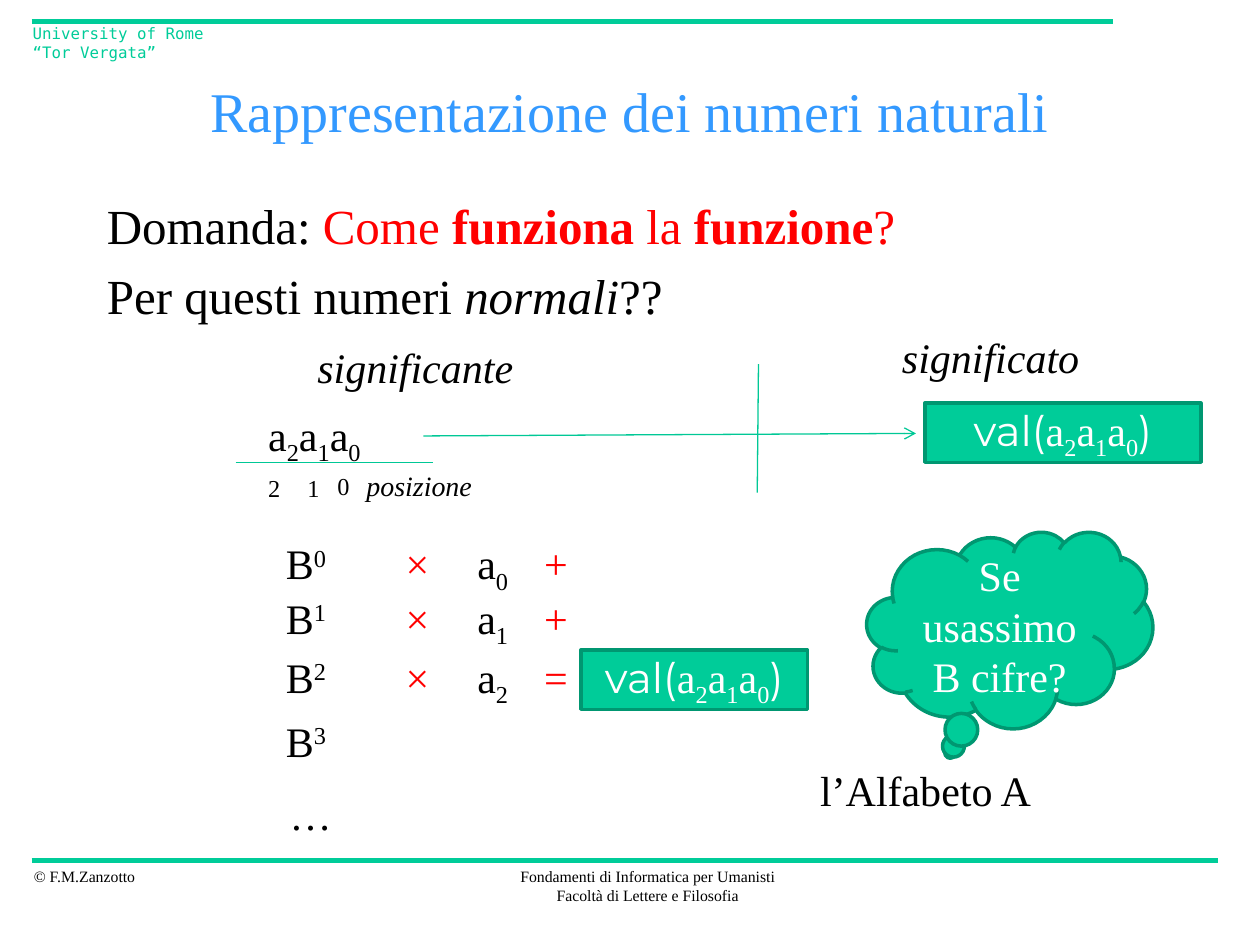
from lxml.etree import SubElement
from pptx import Presentation
from pptx.dml.color import RGBColor
from pptx.enum.shapes import MSO_CONNECTOR, MSO_SHAPE
from pptx.enum.text import MSO_ANCHOR, MSO_AUTO_SIZE, PP_ALIGN
from pptx.oxml.ns import qn
from pptx.util import Inches, Pt

GREEN = RGBColor(0x00, 0xCC, 0x99)
THIN_GREEN = RGBColor(0x00, 0xC8, 0x96)
DARK_GREEN = RGBColor(0x00, 0x97, 0x71)
BLUE = RGBColor(0x33, 0x99, 0xFF)
RED = RGBColor(0xFF, 0x00, 0x00)
BLACK = RGBColor(0x00, 0x00, 0x00)
WHITE = RGBColor(0xFF, 0xFF, 0xFF)
SERIF, MONO, SANS = "Times New Roman", "DejaVu Sans Mono", "Montserrat"
SUBSCRIPT, SUPERSCRIPT = -25, 30


def inner(box, left, top, width, height):
    """Turn a place relative to box into a place on the page."""
    return box[0] + left, box[1] + top, width, height


def write(para, spans, size=24, color=BLACK, font=SERIF, italic=None):
    """Fill a paragraph with spans: plain strings or (text, style) pairs."""
    para.font.size = Pt(size)
    para.font.name = font
    para.font.color.rgb = color
    para.font.italic = italic
    for item in [spans] if isinstance(spans, str) else spans:
        text, style = (item, {}) if isinstance(item, str) else item
        span = para.add_run()
        span.text = text
        span.font.bold = style.get("bold")
        if "italic" in style:
            span.font.italic = style["italic"]
        if "font" in style:
            span.font.name = style["font"]
        if "color" in style:
            span.font.color.rgb = style["color"]
        if "baseline" in style:
            span.font._element.set("baseline", str(style["baseline"] * 1000))


def add_text(page, box, *lines, align=PP_ALIGN.LEFT, wrap=False, grow=True, **look):
    text_box = page.shapes.add_textbox(*map(Inches, box))
    frame = text_box.text_frame
    frame.word_wrap = wrap
    frame.auto_size = MSO_AUTO_SIZE.SHAPE_TO_FIT_TEXT if grow else MSO_AUTO_SIZE.NONE
    for number, spans in enumerate(lines):
        para = frame.add_paragraph() if number else frame.paragraphs[0]
        para.alignment = align
        write(para, spans, **look)
    return frame


def add_line(page, start, end, color=THIN_GREEN, width=0.75, arrow=False):
    line = page.shapes.add_connector(
        MSO_CONNECTOR.STRAIGHT, *map(Inches, (*start, *end)))
    line.line.color.rgb = color
    line.line.width = Pt(width)
    if arrow:
        SubElement(line.line._get_or_add_ln(), qn("a:tailEnd"), type="arrow")
    SubElement(line._element.spPr, qn("a:effectLst"))


def add_green_shape(page, kind, box, spans):
    shape = page.shapes.add_shape(kind, *map(Inches, box))
    shape.shadow.inherit = False
    shape.fill.solid()
    shape.fill.fore_color.rgb = GREEN
    shape.line.color.rgb = DARK_GREEN
    shape.line.width = Pt(2)
    frame = shape.text_frame
    frame.word_wrap = True
    frame.vertical_anchor = MSO_ANCHOR.MIDDLE
    frame.paragraphs[0].alignment = PP_ALIGN.CENTER
    write(frame.paragraphs[0], spans, color=WHITE)


def indexed(letter, index, baseline=SUBSCRIPT):
    return [letter, (str(index), {"baseline": baseline})]


def numeral():
    """The spans of the three digits, highest position first."""
    return [span for index in (2, 1, 0) for span in indexed("a", index)]


def add_value(page, box):
    add_green_shape(page, MSO_SHAPE.RECTANGLE, box,
                    [("val(", {"font": SANS}), *numeral(), (")", {"font": SANS})])


def add_page_frame(page, box):
    left, top, width, height = box
    bottom = top + height
    add_line(page, (left, bottom), (left + width, bottom), GREEN, 3)
    add_line(page, (left, top), (left + 8.58, top), GREEN, 3)
    add_text(page, inner(box, -0.08, height, 1.02, 0.25), "© F.M.Zanzotto", size=9)
    add_text(page, inner(box, 3.77, height, 2.24, 0.4),
             "Fondamenti di Informatica per Umanisti",
             "Facoltà di Lettere e Filosofia", align=PP_ALIGN.CENTER, size=9)
    add_text(page, inner(box, -0.09, -0.03, 1.71, 0.25),
             "University of Rome “Tor Vergata”",
             wrap=True, size=9, font=MONO, color=GREEN)


def add_heading(page, box):
    title = add_text(page, inner(box, 0, 0, box[2], 0.75),
                     "Rappresentazione dei numeri naturali", size=32, color=BLUE,
                     align=PP_ALIGN.CENTER, wrap=True, grow=False)
    title.vertical_anchor = MSO_ANCHOR.MIDDLE
    red, red_bold = {"color": RED}, {"color": RED, "bold": True}
    question = ["Domanda: ", ("Come ", red), ("funziona ", red_bold), ("la ", red),
                ("funzione", red_bold), ("?", red)]
    follow_up = ["Per questi numeri ", ("normali", {"italic": True}), "??"]
    body = add_text(page, inner(box, 0, 1, box[2], 1.16), question, follow_up,
                    size=28, wrap=True, grow=False)
    body.paragraphs[1].space_before = Pt(6.4)


def add_sign_and_meaning(page, box):
    """The numeral with its positions on the left, its value on the right."""
    left, top = box[:2]
    add_text(page, inner(box, 0.16, 0.62, 1.33, 0.5), numeral(), wrap=True)
    add_line(page, (left + 4.15, top + 0.31), (left + 4.14, top + 1.33))
    add_line(page, (left + 1.49, top + 0.88), (left + 5.4, top + 0.86), arrow=True)
    add_text(page, inner(box, 0.55, 0.08, 1.77, 0.5), "significante", italic=True)
    add_text(page, inner(box, 5.19, 0, 1.62, 0.5), "significato", italic=True)
    add_value(page, inner(box, 5.47, 0.62, 2.19, 0.47))
    add_line(page, (left, top + 1.09), (left + 1.57, top + 1.09))
    for digit, x, y in (("0", 0.71, 1.07), ("1", 0.47, 1.09), ("2", 0.16, 1.09)):
        add_text(page, inner(box, x, y, 0.31, 0.5),
                 [(digit, {"baseline": SUPERSCRIPT})])
    add_text(page, inner(box, 0.94, 1.09, 1.05, 0.37), "posizione",
             size=16, italic=True)


def add_expansion(page, box):
    """One row per power of the base, then the resulting value."""
    rows = ((0, "+"), (0.43, "+"), (0.9, "="), (1.41, None))
    for power, (y, sign) in enumerate(rows):
        add_text(page, inner(box, 0, y, 0.54, 0.5), indexed("B", power, SUPERSCRIPT))
        if sign:
            add_text(page, inner(box, 0.95, y, 0.39, 0.5), "×", color=RED)
            add_text(page, inner(box, 1.52, y, 0.46, 0.5), indexed("a", power))
            add_text(page, inner(box, 2.05, y, 0.39, 0.5), sign, color=RED)
    add_text(page, inner(box, 0.03, 1.99, 0.54, 0.5), "…")
    add_value(page, inner(box, 2.44, 0.94, 1.8, 0.47))


def add_alphabet_question(page, box):
    add_text(page, inner(box, 0, 1.8, 1.89, 0.5), "l’Alfabeto A")
    add_green_shape(page, MSO_SHAPE.CLOUD_CALLOUT, inner(box, 0.47, 0, 2.27, 1.56),
                    "Se usassimo B cifre?")


def main():
    deck = Presentation()
    deck.slide_width, deck.slide_height = Inches(10), Inches(7.5)
    page = deck.slides.add_slide(deck.slide_layouts[6])
    add_page_frame(page, (0.25, 0.17, 9.42, 6.66))
    add_heading(page, (0.75, 0.5, 8.5, 2.16))
    add_sign_and_meaning(page, (1.87, 2.58, 7.66, 1.59))
    add_expansion(page, (2.17, 4.22, 4.24, 2.49))
    add_alphabet_question(page, (6.41, 4.22, 2.74, 2.3))
    deck.save("out.pptx")


if __name__ == "__main__":
    main()
